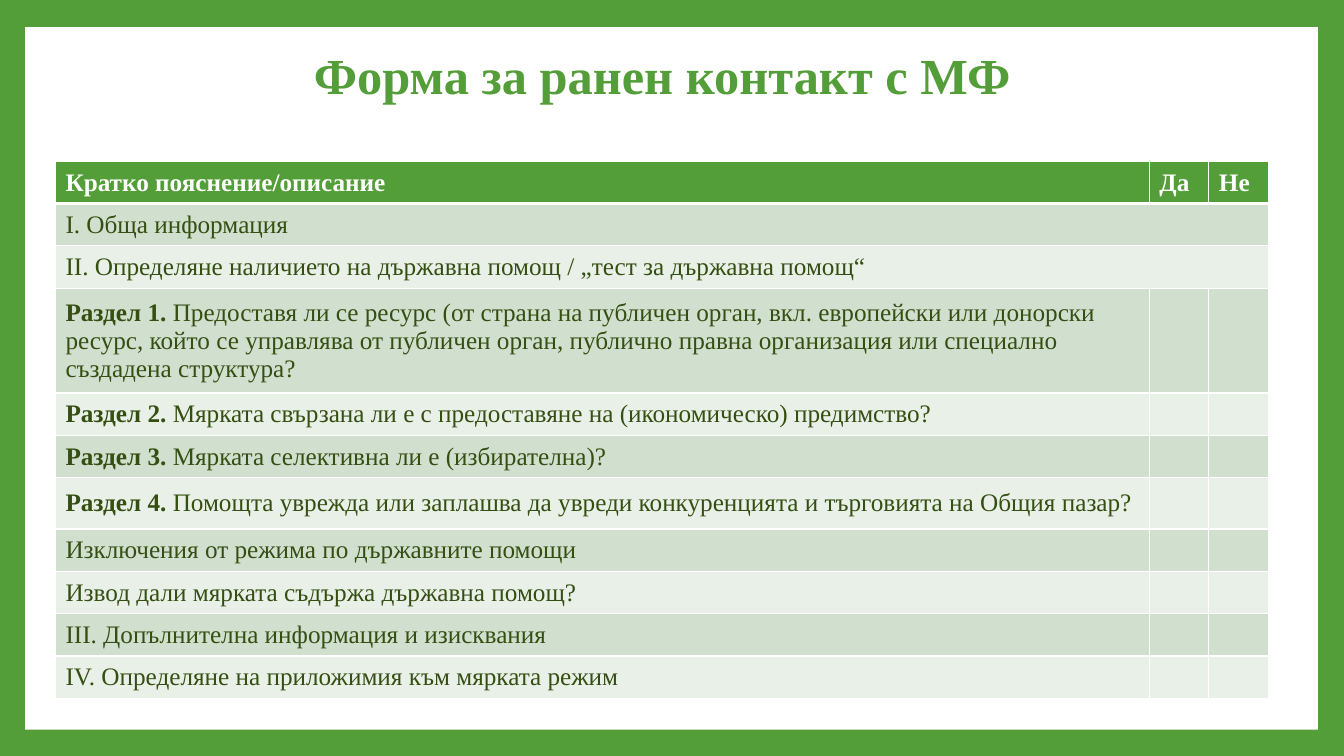
from dataclasses import dataclass

from lxml.etree import SubElement
from pptx import Presentation
from pptx.dml.color import RGBColor
from pptx.enum.shapes import MSO_SHAPE
from pptx.enum.text import MSO_ANCHOR, PP_ALIGN
from pptx.oxml.ns import qn
from pptx.util import Inches, Pt


@dataclass(frozen=True)
class Theme:
    font: str = "Times New Roman"
    green: str = "549E39"
    white: str = "FFFFFF"
    ink: str = "354F12"
    bands: tuple = ("D1DFCE", "E9F0E8")
    title_size: int = 36
    table_size: int = 18
    grid_width: int = 1
    header_rule: int = 3


THEME = Theme()

TITLE = "Форма за ранен контакт с МФ"
HEADINGS = ("Кратко пояснение/описание", "Да", "Не")
COLUMN_WIDTHS = (10.85, 0.59, 0.59)
ROW_HEIGHT = 0.42
TALL_ROWS = {3: 1.04, 6: 0.51}
FULL_WIDTH_ROWS = (1, 2)

# Each question is a bold lead and the text that follows it.
QUESTIONS = (
    ("", "I. Обща информация"),
    ("", "II. Определяне наличието на държавна помощ / „тест за държавна помощ“"),
    ("Раздел 1. ", "Предоставя ли се ресурс (от страна на публичен орган, вкл. "
     "европейски или донорски ресурс, който се управлява от публичен орган, "
     "публично правна организация или специално създадена структура?"),
    ("Раздел 2. ", "Мярката свързана ли е с предоставяне на (икономическо) предимство?"),
    ("Раздел 3. ", "Мярката селективна ли е (избирателна)?"),
    ("Раздел 4. ", "Помощта уврежда или заплашва да увреди конкуренцията и "
     "търговията на Общия пазар?"),
    ("", "Изключения от режима по държавните помощи"),
    ("", "Извод дали мярката съдържа държавна помощ?"),
    ("", "III. Допълнителна информация и изисквания"),
    ("", "IV. Определяне на приложимия към мярката режим"),
)


def rgb(value):
    return RGBColor.from_string(value)


def add_run(paragraph, text, size, color, bold):
    run = paragraph.add_run()
    run.text = text
    formats = {"name": THEME.font, "size": Pt(size), "bold": bold}
    for attribute, value in formats.items():
        setattr(run.font, attribute, value)
    run.font.color.rgb = rgb(color)


def add_frame(slide):
    """Green background with a white panel inside it."""
    background = slide.background.fill
    background.solid()
    background.fore_color.rgb = rgb(THEME.green)
    panel = slide.shapes.add_shape(
        MSO_SHAPE.RECTANGLE, Inches(0.25), Inches(0.27), Inches(12.82), Inches(6.97))
    panel.shadow.inherit = False
    panel.fill.solid()
    panel.fill.fore_color.rgb = rgb(THEME.white)
    panel.line.fill.background()


def add_title(slide):
    title = slide.shapes.add_textbox(
        Inches(1.17), Inches(0.31), Inches(10.8), Inches(0.94))
    title.text_frame.word_wrap = True
    title.text_frame.vertical_anchor = MSO_ANCHOR.MIDDLE
    heading = title.text_frame.paragraphs[0]
    heading.alignment = PP_ALIGN.CENTER
    heading.line_spacing = 0.9
    add_run(heading, TITLE, THEME.title_size, THEME.green, True)


def style_cell(cell, fill, top, bottom):
    """Set white borders, with top and bottom widths in points, and the fill."""
    properties = cell._tc.get_or_add_tcPr()
    widths = {"lnL": THEME.grid_width, "lnR": THEME.grid_width,
              "lnT": top, "lnB": bottom}
    for side, width in widths.items():
        border = SubElement(properties, qn(f"a:{side}"), w=str(Pt(width)))
        solid = SubElement(border, qn("a:solidFill"))
        SubElement(solid, qn("a:srgbClr"), val=THEME.white)
    cell.fill.solid()
    cell.fill.fore_color.rgb = rgb(fill)
    cell.vertical_anchor = MSO_ANCHOR.MIDDLE


def add_form(slide):
    heights = [TALL_ROWS.get(row, ROW_HEIGHT) for row in range(len(QUESTIONS) + 1)]
    form = slide.shapes.add_table(
        len(heights), len(COLUMN_WIDTHS), Inches(0.55), Inches(1.6),
        Inches(sum(COLUMN_WIDTHS)), Inches(sum(heights))).table
    for column, width in zip(form.columns, COLUMN_WIDTHS):
        column.width = Inches(width)

    for index, (row, height) in enumerate(zip(form.rows, heights)):
        row.height = Inches(height)
        fill = THEME.bands[(index - 1) % 2] if index else THEME.green
        top = THEME.header_rule if index == 1 else THEME.grid_width
        bottom = THEME.header_rule if index == 0 else THEME.grid_width
        for cell in row.cells:
            style_cell(cell, fill, top, bottom)

    for column, heading in enumerate(HEADINGS):
        add_run(form.cell(0, column).text_frame.paragraphs[0], heading,
                THEME.table_size, THEME.white, True)
    for index, (lead, question) in enumerate(QUESTIONS, start=1):
        paragraph = form.cell(index, 0).text_frame.paragraphs[0]
        if lead:
            add_run(paragraph, lead, THEME.table_size, THEME.ink, True)
        add_run(paragraph, question, THEME.table_size, THEME.ink, False)
    for index in FULL_WIDTH_ROWS:
        form.cell(index, 0).merge(form.cell(index, len(COLUMN_WIDTHS) - 1))


def main():
    presentation = Presentation()
    presentation.slide_width = Inches(13.33)
    presentation.slide_height = Inches(7.5)
    slide = presentation.slides.add_slide(presentation.slide_layouts[6])
    add_frame(slide)
    add_title(slide)
    add_form(slide)
    presentation.save("out.pptx")


if __name__ == "__main__":
    main()
